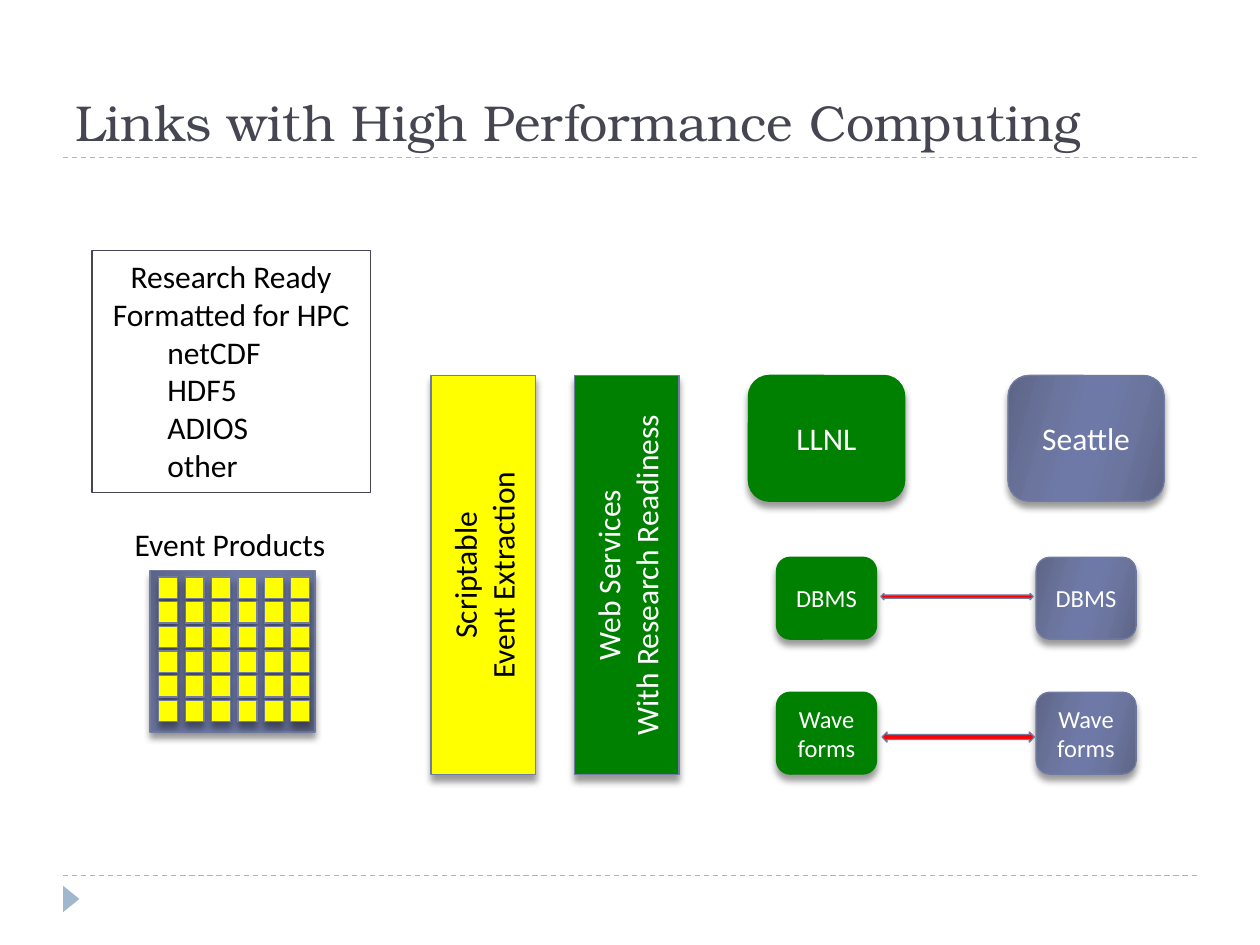
from lxml import etree
from pptx import Presentation
from pptx.dml.color import RGBColor
from pptx.enum.dml import MSO_LINE
from pptx.enum.shapes import MSO_CONNECTOR, MSO_SHAPE
from pptx.enum.text import MSO_ANCHOR, MSO_AUTO_SIZE, PP_ALIGN
from pptx.oxml.ns import qn
from pptx.util import Emu, Inches, Pt

RECTANGLE, ROUNDED = MSO_SHAPE.RECTANGLE, MSO_SHAPE.ROUNDED_RECTANGLE
TRIANGLE, DOUBLE_ARROW = MSO_SHAPE.ISOSCELES_TRIANGLE, MSO_SHAPE.LEFT_RIGHT_ARROW
LEFT, CENTER = PP_ALIGN.LEFT, PP_ALIGN.CENTER
TOP, MIDDLE, BOTTOM = MSO_ANCHOR.TOP, MSO_ANCHOR.MIDDLE, MSO_ANCHOR.BOTTOM

BLACK, WHITE, GREEN, YELLOW, RED = "000000", "FFFFFF", "008000", "FFFF00", "FF0000"
SLATE, INK, PALE = "727CA3", "464653", "9FB8CD"
SLATE_STOPS = [(0, "5D6585"), (30, "6B759E"), (45, "6E79A7"),
               (55, "6E79A7"), (73, "6B759E"), (100, "5D6585")]
BODY_FONT, TITLE_FONT = "Calibri", "TeX Gyre Bonum"


def color(value):
    return RGBColor.from_string(value)


def add_color(parent, value):
    return etree.SubElement(parent, qn("a:srgbClr"), val=value)


def set_gradient(shape, stops):
    shape.fill.gradient()
    shape.fill.gradient_angle = 344
    stop_list = shape._element.spPr.find(qn("a:gradFill")).find(qn("a:gsLst"))
    for stop in list(stop_list):
        stop_list.remove(stop)
    for position, value in stops:
        add_color(etree.SubElement(stop_list, qn("a:gs"), pos=str(position * 1000)), value)


def add_shadow(shape):
    effects = shape._element.spPr.find(qn("a:effectLst"))
    outer = etree.SubElement(effects, qn("a:outerShdw"), blurRad=str(Pt(4)),
                             dist=str(Pt(3.4)), dir="5400000", rotWithShape="0")
    etree.SubElement(add_color(outer, BLACK), qn("a:alpha"), val="40000")


def add_box(shapes, kind, box, fill=None, line=None, shadow=False):
    """Fill is a hex string, a list of gradient stops or None."""
    shape = shapes.add_shape(kind, *map(Inches, box))
    shape.shadow.inherit = False
    if fill is None:
        shape.fill.background()
    elif isinstance(fill, list):
        set_gradient(shape, fill)
    else:
        shape.fill.solid()
        shape.fill.fore_color.rgb = color(fill)
    if line:
        shape.line.color.rgb = color(line)
        shape.line.width = Pt(0.75)
    else:
        shape.line.fill.background()
    if shadow:
        add_shadow(shape)
    return shape


def write(shape, text, size, text_color, font=BODY_FONT, align=CENTER, anchor=MIDDLE):
    frame = shape.text_frame
    frame.text = text
    frame.vertical_anchor = anchor
    for paragraph in frame.paragraphs:
        paragraph.alignment = align
        for run in paragraph.runs:
            run.font.size = Pt(size)
            run.font.name = font
            run.font.color.rgb = color(text_color)
    return frame


def add_frame(slide, width, height):
    """Title, dashed rules and corner marker."""
    margin = 0.05 * width
    for y in (1.25, 6.95):
        rule = slide.shapes.add_connector(
            MSO_CONNECTOR.STRAIGHT, *map(Inches, (margin, y, width - margin, y)))
        rule.line.color.rgb = color(PALE)
        rule.line.width = Pt(0.75)
        rule.line.dash_style = MSO_LINE.DASH
        etree.SubElement(rule._element.spPr, qn("a:effectLst"))
    marker = add_box(slide.shapes, TRIANGLE, (0.46, 7.07, 0.21, 0.13), PALE)
    marker.rotation = 90

    title = slide.shapes.title
    title.left, title.top = Inches(margin), Inches(0.17)
    title.width, title.height = Inches(width - 2 * margin), Inches(1.08)
    frame = write(title, "Links with High Performance Computing", 28.8, INK,
                  TITLE_FONT, LEFT, BOTTOM)
    frame.auto_size = MSO_AUTO_SIZE.NONE


def add_site(slide, box, name, fill, line):
    """A site above its database and waveform stores."""
    left, top, width, height = box
    shapes = slide.shapes.add_group_shape().shapes
    # Label, text size, and top, width and height as shares of the box
    parts = [(name, 18, 0, 1, 0.315),
             ("DBMS", 14, 0.455, 0.64, 0.205),
             ("Wave\nforms", 14, 0.793, 0.64, 0.205)]
    for text, size, y, w, h in parts:
        part_box = (left + width * (1 - w) / 2, top + height * y, width * w, height * h)
        shape = add_box(shapes, ROUNDED, part_box, fill, line, shadow=True)
        write(shape, text, size, WHITE)


def add_bar(slide, box, text, fill, text_color):
    """Vertical service bar with text that reads upwards."""
    bar = add_box(slide.shapes, RECTANGLE, box, fill, SLATE, shadow=True)
    frame = write(bar, text, 18, text_color)
    frame._txBody.bodyPr.set("vert", "vert270")


def add_products(slide, box, count=6):
    """Panel with a square grid of event products, under its caption."""
    left, top, width, height = box
    shapes = slide.shapes.add_group_shape().shapes
    add_box(shapes, RECTANGLE, box, SLATE_STOPS, SLATE, shadow=True)
    column, row = 0.16 * width, 0.153 * height
    for index in range(count * count):
        y, x = divmod(index, count)
        cell = (left + 0.07 + x * column, top + 0.05 + y * row, 0.15, 0.17)
        add_box(shapes, RECTANGLE, cell, YELLOW, SLATE, shadow=True)

    caption = slide.shapes.add_textbox(*map(Inches, (left - 0.22, top - 0.41, 1.74, 0.4)))
    write(caption, "Event Products", 18, BLACK, align=LEFT, anchor=TOP).word_wrap = False


def add_formats(slide, box):
    """Outlined list of research formats, with two centred heading lines."""
    lines = ["Research Ready", "Formatted for HPC", "netCDF", "HDF5", "ADIOS", "other"]
    shape = add_box(slide.shapes, RECTANGLE, box, line=INK)
    frame = write(shape, "\n".join(lines), 18, BLACK, anchor=TOP)
    frame.word_wrap = True
    for paragraph in frame.paragraphs[2:]:
        paragraph.alignment = LEFT
        properties = paragraph._p.get_or_add_pPr()
        properties.set("marL", str(Inches(0.5)))
        properties.set("indent", "0")


def main():
    presentation = Presentation()
    presentation.slide_width, presentation.slide_height = Inches(10), Inches(7.5)
    slide = presentation.slides.add_slide(presentation.slide_layouts[5])
    add_frame(slide, Emu(presentation.slide_width).inches,
              Emu(presentation.slide_height).inches)

    # Sites and the links between their stores
    top, height = 2.98, 3.17
    add_site(slide, (5.94, top, 1.24, height), "LLNL", GREEN, GREEN)
    add_site(slide, (8, top, 1.24, height), "Seattle", SLATE_STOPS, SLATE)
    for link_box in ((6.99, 4.71, 1.21, 0.05), (7, 5.81, 1.21, 0.08)):
        add_box(slide.shapes, DOUBLE_ARROW, link_box, RED, SLATE)

    # Service bars
    add_bar(slide, (4.56, top, 0.83, height),
            "Web Services\nWith Research Readiness", GREEN, WHITE)
    add_bar(slide, (3.42, top, 0.83, height),
            "Scriptable\nEvent Extraction", YELLOW, BLACK)

    # Products and formats
    add_products(slide, (1.19, 4.53, 1.31, 1.28))
    add_formats(slide, (0.73, 1.99, 2.21, 1.92))
    presentation.save("out.pptx")


if __name__ == "__main__":
    main()
